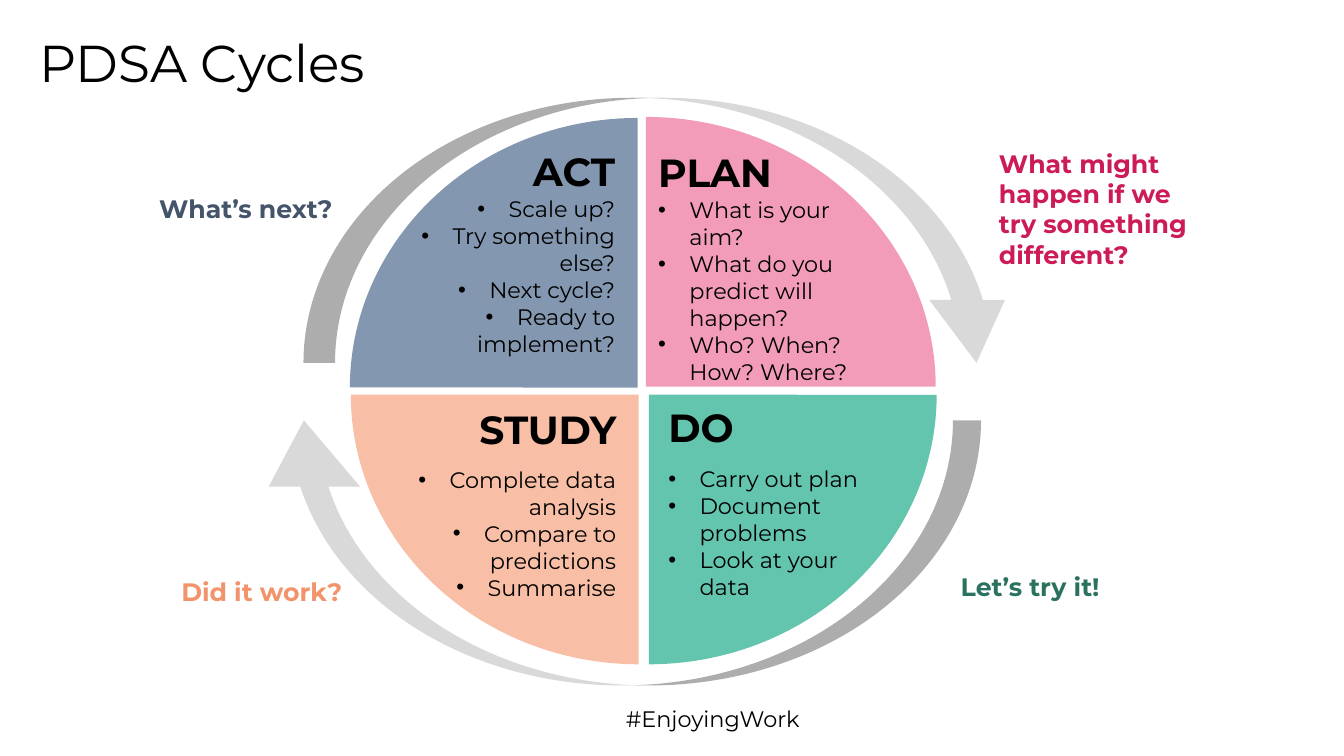
from dataclasses import dataclass

from lxml import etree
from pptx import Presentation
from pptx import util as u
from pptx.dml.color import RGBColor
from pptx.enum import shapes, text
from pptx.oxml.ns import qn

EMU_PER_PX = 9144
FONT = "Montserrat"
BLACK = "000000"
ARROW_GREY = "D9D9D9"
BULLET_INDENT = 31
PIE_ANGLES = (108.02, 162)

Box = tuple[int, int, int, int]


@dataclass
class Caption:
    words: str
    box: Box
    color: str
    size: int = 18
    bold: bool = True


@dataclass
class Quadrant:
    heading: str
    bullets: list[str]
    pie: Box
    rotation: int
    fill: str
    text_box: Box
    heading_gap: int
    caption: Caption
    align: text.PP_ALIGN = text.PP_ALIGN.LEFT


@dataclass
class Arrow:
    box: Box
    rotation: int
    adjustments: tuple[float, ...]


QUADRANTS = [
    Quadrant(
        "PLAN",
        ["What is your aim?", "What do you predict will happen?", "Who? When? How? Where?"],
        (373, 96, 535, 575), 90, "F29CB9", (643, 142, 228, 247), 1,
        Caption("What might happen if we try something different?", (981, 142, 214, 131), "CC1B57"),
    ),
    Quadrant(
        "DO",
        ["Carry out plan", "Document problems", "Look at your data"],
        (358, 124, 571, 535), 180, "64C5AE", (653, 395, 225, 207), 11,
        Caption("Let’s try it!", (943, 562, 204, 40), "2A7160"),
    ),
    Quadrant(
        "STUDY",
        ["Complete data analysis", "Compare to predictions", "Summarise"],
        (366, 106, 535, 571), 270, "F8BEA6", (396, 397, 225, 210), 10,
        Caption("Did it work?", (170, 567, 200, 40), "F3936B"), text.PP_ALIGN.RIGHT,
    ),
    Quadrant(
        "ACT",
        ["Scale up?", "Try something else?", "Next cycle?", "Ready to implement?"],
        (347, 117, 571, 535), 0, "8497B0", (374, 141, 246, 252), 1,
        Caption("What’s next?", (148, 187, 216, 40), "44546A"), text.PP_ALIGN.RIGHT,
    ),
]

ARROWS = [
    Arrow((301, 97, 705, 263), 0, (0.119, 0.285, 0.237)),
    Arrow((256, 417, 717, 263), 180, (0.106, 0.345, 0.25)),
]


def px(length: int) -> u.Emu:
    return u.Emu(length * EMU_PER_PX)


def rgb(color: str) -> RGBColor:
    return RGBColor.from_string(color)


def add_text_frame(slide, box: Box):
    text_frame = slide.shapes.add_textbox(*map(px, box)).text_frame
    text_frame.word_wrap = True
    return text_frame


def format_runs(paragraph, size: int, color: str, bold: bool) -> None:
    for run in paragraph.runs:
        run.font.name = FONT
        run.font.size = u.Pt(size)
        run.font.bold = bold
        run.font.color.rgb = rgb(color)


def add_bullet(paragraph) -> None:
    properties = paragraph._p.get_or_add_pPr()
    properties.set("marL", str(px(BULLET_INDENT)))
    properties.set("indent", str(px(-BULLET_INDENT)))
    etree.SubElement(properties, qn("a:buFont"), typeface="Arial")
    etree.SubElement(properties, qn("a:buChar"), char="•")


def add_caption(slide, caption: Caption):
    text_frame = add_text_frame(slide, caption.box)
    text_frame.text = caption.words
    format_runs(text_frame.paragraphs[0], caption.size, caption.color, caption.bold)
    return text_frame


def add_preset(slide, kind: shapes.MSO_SHAPE, box: Box, rotation: int,
               adjustments: tuple[float, ...], fill: str) -> None:
    shape = slide.shapes.add_shape(kind, *map(px, box))
    shape.rotation = rotation
    for index, value in enumerate(adjustments):
        shape.adjustments[index] = value
    shape.shadow.inherit = False
    shape.fill.solid()
    shape.fill.fore_color.rgb = rgb(fill)
    shape.line.fill.background()


def add_quadrant(slide, quadrant: Quadrant) -> None:
    add_preset(slide, shapes.MSO_SHAPE.PIE, quadrant.pie, quadrant.rotation,
               PIE_ANGLES, quadrant.fill)
    text_frame = add_text_frame(slide, quadrant.text_box)
    heading = text_frame.paragraphs[0]
    heading.text = quadrant.heading
    heading.alignment = quadrant.align
    heading.space_after = u.Pt(quadrant.heading_gap)
    format_runs(heading, 28, BLACK, True)
    for bullet in quadrant.bullets:
        paragraph = text_frame.add_paragraph()
        paragraph.text = bullet
        paragraph.alignment = quadrant.align
        add_bullet(paragraph)
        format_runs(paragraph, 16, BLACK, False)
    add_caption(slide, quadrant.caption)


def main() -> None:
    presentation = Presentation()
    presentation.slide_width = px(1333)
    presentation.slide_height = px(750)
    slide = presentation.slides.add_slide(presentation.slide_layouts[6])

    add_caption(slide, Caption("#EnjoyingWork", (611, 695, 667, 37), BLACK, 16, False))
    title = add_caption(slide, Caption("PDSA Cycles", (29, -47, 1150, 145), BLACK, 37, False))
    title.vertical_anchor = text.MSO_ANCHOR.BOTTOM
    title.paragraphs[0].line_spacing = 0.9

    for quadrant in QUADRANTS:
        add_quadrant(slide, quadrant)
    for arrow in ARROWS:
        add_preset(slide, shapes.MSO_SHAPE.CURVED_DOWN_ARROW, arrow.box, arrow.rotation,
                   arrow.adjustments, ARROW_GREY)

    presentation.save("out.pptx")


if __name__ == "__main__":
    main()
